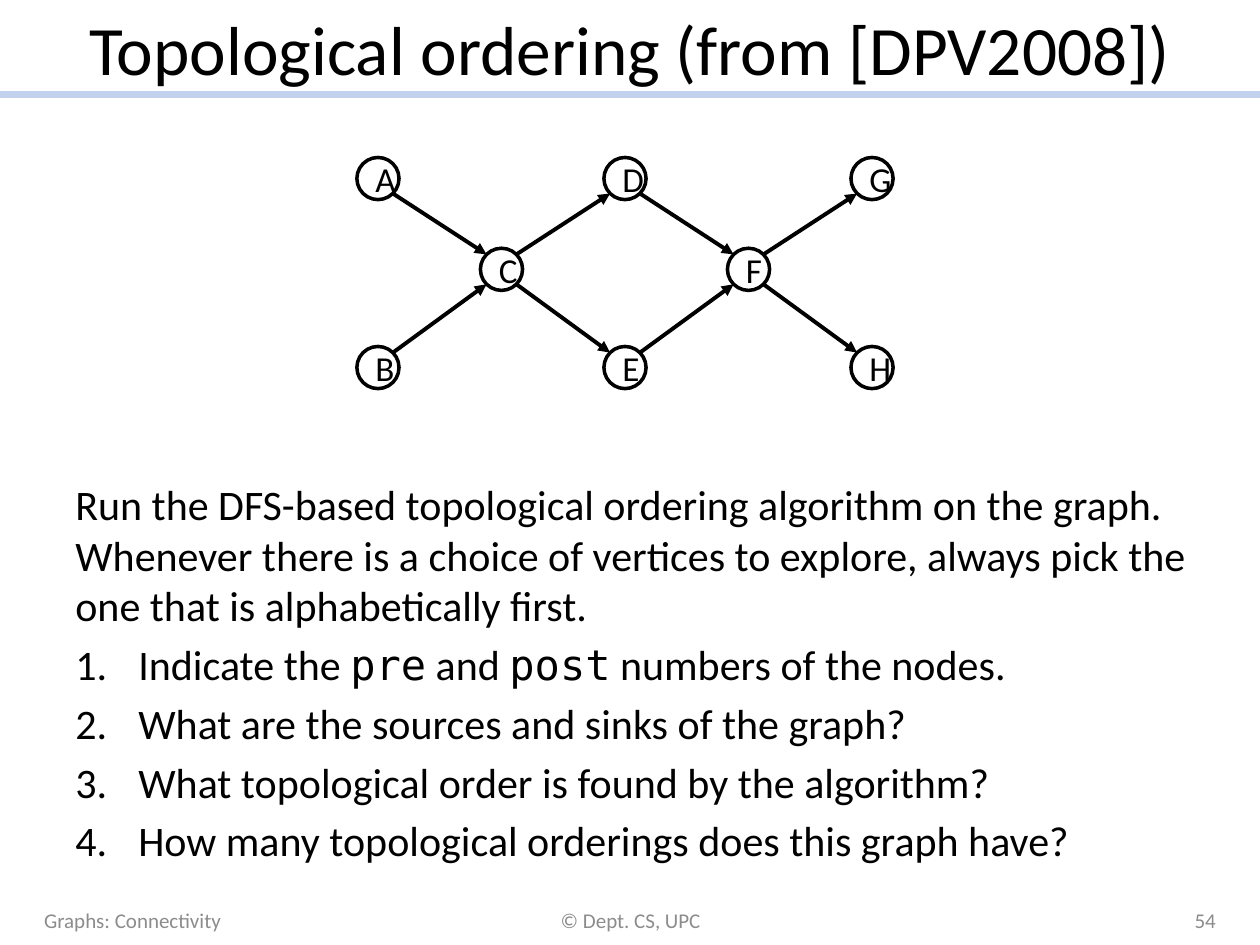
from lxml import etree
from pptx import Presentation
from pptx.dml.color import RGBColor
from pptx.enum.shapes import MSO_CONNECTOR, MSO_SHAPE
from pptx.enum.text import MSO_ANCHOR, MSO_AUTO_SIZE, PP_ALIGN
from pptx.oxml.ns import qn
from pptx.util import Cm, Pt

LEFT, CENTER, RIGHT = PP_ALIGN.LEFT, PP_ALIGN.CENTER, PP_ALIGN.RIGHT
MIDDLE, TOP = MSO_ANCHOR.MIDDLE, MSO_ANCHOR.TOP
STRAIGHT, OVAL = MSO_CONNECTOR.STRAIGHT, MSO_SHAPE.OVAL
SANS, MONO = "Calibri", "DejaVu Sans Mono"
BLACK, WHITE, GRAY, PALE_BLUE = "000000", "FFFFFF", "8C8C8C", "C2D1ED"

# Content
TITLE = "Topological ordering (from [DPV2008])"
INTRO = ("Run the DFS-based topological ordering algorithm on the graph. "
         "Whenever there is a choice of vertices to explore, always pick the "
         "one that is alphabetically first.")
QUESTIONS = [
    [("Indicate the ", SANS), ("pre", MONO), (" and ", SANS),
     ("post", MONO), (" numbers of the nodes.", SANS)],
    [("What are the sources and sinks of the graph?", SANS)],
    [("What topological order is found by the algorithm?", SANS)],
    [("How many topological orderings does this graph have?", SANS)],
]
NODES = {  # name: (column, row)
    "A": (0, 0), "B": (0, 2), "C": (1, 1), "D": (2, 0),
    "E": (2, 2), "F": (3, 1), "G": (4, 0), "H": (4, 2),
}
EDGES = ["AC", "BC", "CD", "CE", "DF", "EF", "FG", "FH"]
FOOTERS = [  # text, left, width, alignment
    ("Graphs: Connectivity", 0.64, 5.92, LEFT),
    ("© Dept. CS, UPC", 8.69, 8.05, CENTER),
    ("54", 18.84, 5.92, RIGHT),
]

# Graph grid, in cm
FIRST_COLUMN, COLUMN_STEP = 7.62, 2.49
ROWS = [3.6, 5.43, 7.41]
DIAMETER = 0.85
DIAGONAL = DIAMETER / 2 * 0.71


def color(code):
    return RGBColor.from_string(code)


def style(para, size, code=BLACK, align=LEFT, name=SANS):
    para.alignment = align
    para.font.size = Pt(size)
    para.font.name = name
    para.font.color.rgb = color(code)


def add_text_box(page, left, top, width, height, anchor):
    box = page.shapes.add_textbox(Cm(left), Cm(top), Cm(width), Cm(height))
    box.text_frame.word_wrap = True
    box.text_frame.vertical_anchor = anchor
    return box.text_frame


def add_line(page, x1, y1, x2, y2, code, width, arrow=False):
    line = page.shapes.add_connector(STRAIGHT, Cm(x1), Cm(y1), Cm(x2), Cm(y2))
    line.line.color.rgb = color(code)
    line.line.width = Pt(width)
    if arrow:
        etree.SubElement(line.line._get_or_add_ln(), qn("a:tailEnd"), type="triangle")
    etree.SubElement(line._element.spPr, qn("a:effectLst"))


def center(name):
    column, row = NODES[name]
    return FIRST_COLUMN + column * COLUMN_STEP, ROWS[row]


def add_edge(page, start, end):
    (x1, y1), (x2, y2) = center(start), center(end)
    dy = DIAGONAL if y2 > y1 else -DIAGONAL
    add_line(page, x1 + DIAGONAL, y1 + dy, x2 - DIAGONAL, y2 - dy, BLACK, 2.25, True)


def add_node(page, name):
    x, y = center(name)
    node = page.shapes.add_shape(OVAL, Cm(x - DIAMETER / 2), Cm(y - DIAMETER / 2),
                                 Cm(DIAMETER), Cm(DIAMETER))
    node.shadow.inherit = False
    node.fill.solid()
    node.fill.fore_color.rgb = color(WHITE)
    node.line.color.rgb = color(BLACK)
    node.line.width = Pt(2)
    node.text_frame.text = name
    style(node.text_frame.paragraphs[0], 20, align=CENTER)


def number(para):
    properties = para._p.get_or_add_pPr()
    properties.set("marL", str(Cm(1.27)))
    properties.set("indent", str(-Cm(1.27)))
    etree.SubElement(properties, qn("a:buFont"), typeface="+mj-lt")
    etree.SubElement(properties, qn("a:buAutoNum"), type="arabicPeriod")


def add_exercise(page):
    frame = add_text_box(page, 1.27, 9.53, 23.28, 7.82, TOP)
    intro = frame.paragraphs[0]
    intro.text = INTRO
    intro.space_before = Pt(4.8)
    style(intro, 24)
    for question in QUESTIONS:
        para = frame.add_paragraph()
        para.space_before = Pt(4.8)
        number(para)
        style(para, 24)
        for text, name in question:
            span = para.add_run()
            span.text = text
            span.font.name = name


def main():
    deck = Presentation()
    deck.slide_width, deck.slide_height = Cm(25.4), Cm(19.05)
    page = deck.slides.add_slide(deck.slide_layouts[5])

    # Title and rule
    add_line(page, 0, 1.91, 25.4, 1.91, PALE_BLUE, 4)
    title = page.shapes.title
    title.left, title.top, title.width, title.height = Cm(1.27), Cm(0), Cm(22.86), Cm(1.91)
    title.text_frame.text = TITLE
    title.text_frame.auto_size = MSO_AUTO_SIZE.NONE
    title.text_frame.vertical_anchor = MIDDLE
    style(title.text_frame.paragraphs[0], 39.6, align=CENTER)

    # Graph
    for start, end in EDGES:
        add_edge(page, start, end)
    for name in NODES:
        add_node(page, name)

    # Exercise text
    add_exercise(page)

    # Footer
    for text, left, width, align in FOOTERS:
        frame = add_text_box(page, left, 18.03, width, 1.02, MIDDLE)
        frame.text = text
        style(frame.paragraphs[0], 12, GRAY, align)

    deck.save("out.pptx")


if __name__ == "__main__":
    main()
